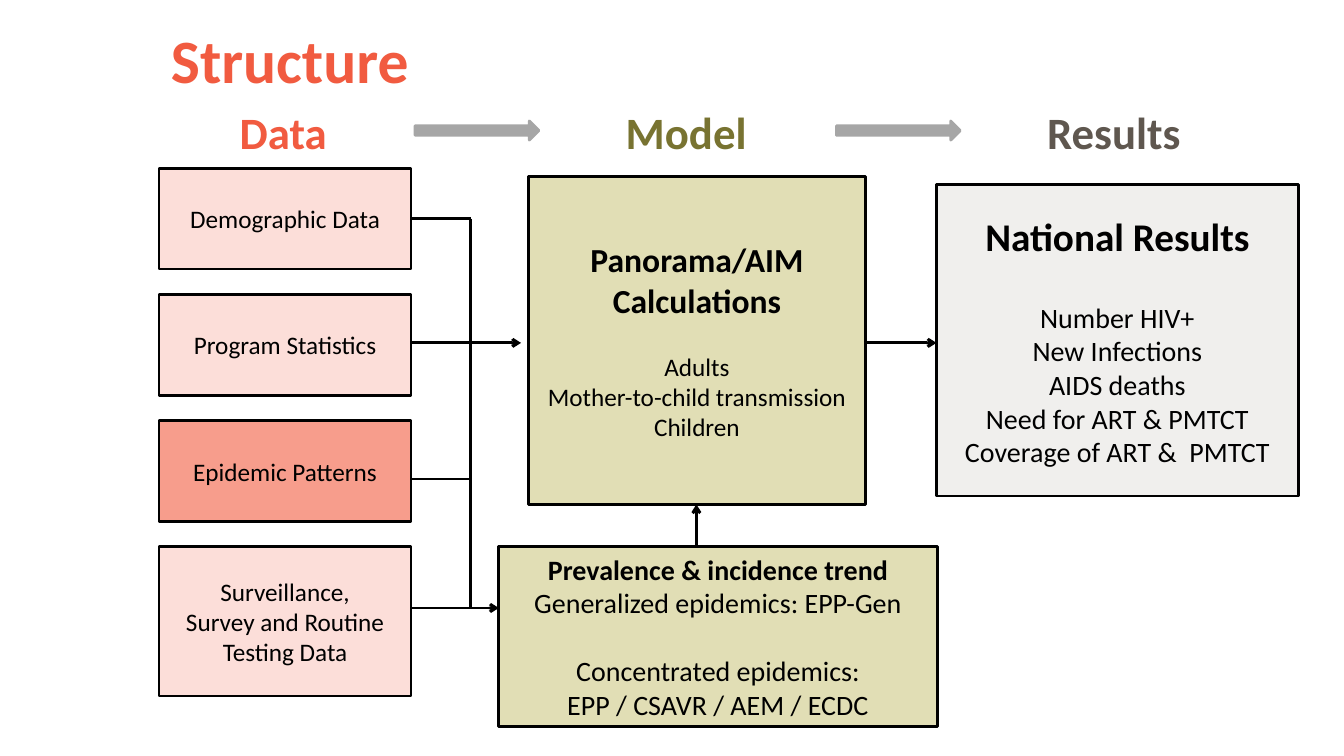
from lxml import etree
from pptx import Presentation
from pptx.dml.color import RGBColor
from pptx.enum import shapes, text
from pptx.oxml import ns
from pptx.util import Cm, Pt


class Theme:
    font = "Calibri"
    ink, coral, olive, brown, grey = "000000", "F15B40", "787331", "5F574F", "A6A6A6"
    pink, salmon, sand, pale = "FCDED9", "F79D8C", "E1DEB5", "F0EFED"
    title, head, big, mid, body, small = 44, 32, 28, 24, 20, 18
    line = 2


# Content: a text line is (words, size, bold, space before in points)
TITLE = "Structure"

# Headings: words, colour, left, width
HEADS = [
    ("Data", Theme.coral, 5.79, 2.72),
    ("Model", Theme.olive, 15.52, 3.58),
    ("Results", Theme.brown, 26.14, 3.91),
]

# Data boxes: lines, fill, height
DATA = [
    (["Demographic Data"], Theme.pink, 2.54),
    (["Program Statistics"], Theme.pink, 2.54),
    (["Epidemic Patterns"], Theme.salmon, 2.54),
    (["Surveillance,", "Survey and Routine Testing Data"], Theme.pink, 3.76),
]

MODEL = [
    ("Panorama/AIM Calculations", Theme.mid, True, 0),
    ("Adults", Theme.small, False, 22),
    ("Mother-to-child transmission", Theme.small, False, 0),
    ("Children", Theme.small, False, 0),
]
TREND = [
    ("Prevalence & incidence trend", Theme.body, True, 0),
    ("Generalized epidemics: EPP-Gen", Theme.body, False, 0),
    ("Concentrated epidemics:", Theme.body, False, 24.4),
    ("EPP / CSAVR / AEM / ECDC", Theme.body, False, 0),
]
RESULTS = [
    ("National Results", Theme.big, True, 0),
    ("Number HIV+", Theme.body, False, 29.3),
    ("New Infections", Theme.body, False, 0),
    ("AIDS deaths", Theme.body, False, 0),
    ("Need for ART & PMTCT", Theme.body, False, 0),
    ("Coverage of ART &  PMTCT", Theme.body, False, 0),
]

# Layout in centimetres: left, top, width, height
LEFT, TOP, WIDE, STEP = 4.01, 4.24, 6.35, 3.18
MODEL_AT = (13.31, 4.45, 8.51, 8.26)
TREND_AT = (12.57, 13.78, 11.05, 4.52)
RESULT_AT = (23.6, 4.65, 9.12, 7.85)

deck = Presentation()
deck.slide_width, deck.slide_height = Cm(33.87), Cm(19.05)
slide = deck.slides.add_slide(deck.slide_layouts[6])


def place(at):
    return [Cm(n) for n in at]


def write(frame, lines, tint=Theme.ink, align=text.PP_ALIGN.CENTER):
    for i, (words, size, bold, gap) in enumerate(lines):
        par = frame.add_paragraph() if i else frame.paragraphs[0]
        par.text, par.alignment, par.space_before = words, align, Pt(gap)
        font = par.font
        font.name, font.size, font.bold = Theme.font, Pt(size), bold
        font.color.rgb = RGBColor.from_string(tint)


def shape(kind, at, fill, edge):
    item = slide.shapes.add_shape(kind, *place(at))
    item.shadow.inherit = False
    item.fill.solid()
    item.fill.fore_color.rgb = RGBColor.from_string(fill)
    item.line.color.rgb = RGBColor.from_string(edge)
    item.line.width = Pt(Theme.line)
    return item


def box(at, fill, lines):
    item = shape(shapes.MSO_SHAPE.FLOWCHART_PROCESS, at, fill, Theme.ink)
    item.text_frame.word_wrap = True
    item.text_frame.vertical_anchor = text.MSO_ANCHOR.MIDDLE
    write(item.text_frame, lines)


def label(at, words, size, tint, wrap):
    frame = slide.shapes.add_textbox(*place(at)).text_frame
    frame.word_wrap = wrap
    frame.vertical_anchor = text.MSO_ANCHOR.MIDDLE
    write(frame, [(words, size, True, 0)], tint, text.PP_ALIGN.LEFT)


def link(x1, y1, x2, y2, tip=False):
    line = slide.shapes.add_connector(
        shapes.MSO_CONNECTOR.STRAIGHT, *place((x1, y1, x2, y2)))
    line.line.color.rgb = RGBColor.from_string(Theme.ink)
    line.line.width = Pt(Theme.line)
    if tip:
        etree.SubElement(line.line._get_or_add_ln(), ns.qn("a:tailEnd"), type="arrow")
    etree.SubElement(line._element.spPr, ns.qn("a:effectLst"))


# Title and column headings
label((4.06, 0.38, 25.7, 2.21), TITLE, Theme.title, Theme.coral, True)
for words, tint, left, wide in HEADS:
    label((left, 2.49, wide, 1.63), words, Theme.head, tint, False)

# Block arrows between headings
for left in (10.46, 21.08):
    shape(shapes.MSO_SHAPE.RIGHT_ARROW, (left, 3.05, 3.12, 0.48),
          Theme.grey, Theme.grey)

# Boxes
for i, (lines, fill, high) in enumerate(DATA):
    box((LEFT, TOP + i * STEP, WIDE, high), fill,
        [(words, Theme.small, False, 0) for words in lines])
box(MODEL_AT, Theme.sand, MODEL)
box(TREND_AT, Theme.sand, TREND)
box(RESULT_AT, Theme.pale, RESULTS)

# Links from the data boxes, joined by an upright bus
edge, bus = LEFT + WIDE, 11.86
first, flow, third, last = 5.51, 8.64, 12.07, 15.32
for y in (first, third):
    link(edge, y, bus, y)
link(bus, first, bus, last)
link(edge, flow, 13.13, flow, True)
link(edge, last, TREND_AT[0], last, True)

# Links into and out of the model
link(MODEL_AT[0] + MODEL_AT[2], flow, RESULT_AT[0], flow, True)
link(17.55, TREND_AT[1], 17.55, MODEL_AT[1] + MODEL_AT[3], True)

deck.save("out.pptx")
